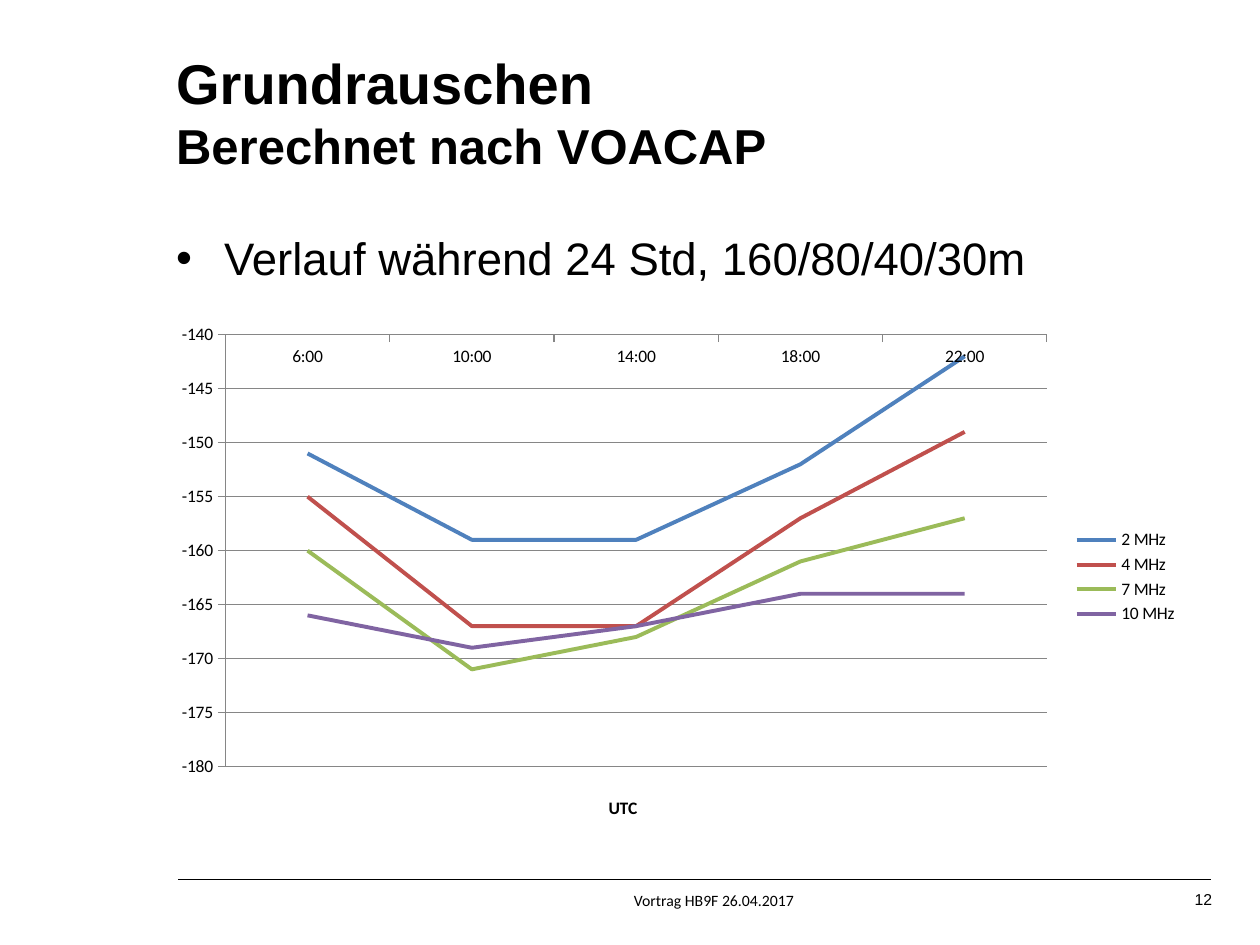
"""Build the slide on the noise floor over 24 hours."""
from lxml import etree
from pptx import Presentation
from pptx.chart.data import CategoryChartData as Data
from pptx.dml.color import RGBColor as RGB
from pptx.enum.chart import XL_CHART_TYPE as Kind, XL_LEGEND_POSITION as Side
from pptx.enum.chart import XL_TICK_MARK as Tick
from pptx.enum.shapes import MSO_CONNECTOR as Link
from pptx.enum.text import MSO_ANCHOR as Anchor, PP_ALIGN as Align
from pptx.oxml import parse_xml
from pptx.oxml.ns import nsdecls, qn
from pptx.util import Inches, Pt

HUES = {"ink": "000000", "grid": "868686", "2 MHz": "4F81BD",
        "4 MHz": "C0504D", "7 MHz": "9BBB59", "10 MHz": "8064A2"}
LEVELS = {"2 MHz": (-151, -159, -159, -152, -142),
          "4 MHz": (-155, -167, -167, -157, -149),
          "7 MHz": (-160, -171, -168, -161, -157),
          "10 MHz": (-166, -169, -167, -164, -164)}


def add_text(box, runs, name="Arial", bold=False, align=Align.LEFT,
             anchor=Anchor.TOP, wrap=True, inset=(0.1, 0.05)):
    frame = slide.shapes.add_textbox(*map(Inches, box)).text_frame
    side, edge = map(Inches, inset)
    look = {"word_wrap": wrap, "vertical_anchor": anchor,
            "margin_left": side, "margin_right": side,
            "margin_top": edge, "margin_bottom": edge}
    for key, value in look.items():
        setattr(frame, key, value)
    para = frame.paragraphs[0]
    para.alignment = align
    for place, (text, size) in enumerate(runs):
        if place:
            para.add_line_break()
        run = para.add_run()
        run.text = text
        for key, value in {"name": name, "size": Pt(size), "bold": bold}.items():
            setattr(run.font, key, value)
        run.font.color.rgb = RGB.from_string(HUES["ink"])
    return para


def set_place(node, **spots):
    old = node.find(qn("c:layout"))
    if old is not None:
        node.remove(old)
    marks = "".join(f'<c:{key} val="{value}"/>' for key, value in spots.items())
    layout = parse_xml(f'<c:layout {nsdecls("c")}><c:manualLayout>{marks}'
                       '</c:manualLayout></c:layout>')
    text = node.find(qn("c:tx"))
    if text is None:
        node.insert(0, layout)
    else:
        text.addnext(layout)


deck = Presentation()
deck.slide_width, deck.slide_height = Inches(10), Inches(7.5)
slide = deck.slides.add_slide(deck.slide_layouts[6])

add_text((9.37, 7.06, 0.25, 0.15), [("12", 9)], align=Align.RIGHT,
         wrap=False, inset=(0, 0))
rule = slide.shapes.add_connector(
    Link.STRAIGHT, *map(Inches, (9.61, 6.98, 1.41, 6.98)))
rule.line.color.rgb = RGB.from_string(HUES["ink"])
rule.line.width = Pt(0.75)
etree.SubElement(rule._element.spPr, qn("a:effectLst"))

add_text((1.3, 0.3, 8.2, 1.17),
         [("Grundrauschen", 32), ("Berechnet nach VOACAP", 28)],
         bold=True, anchor=Anchor.MIDDLE)
point = add_text((1.3, 1.78, 8.2, 0.6),
                 [("Verlauf während 24 Std, 160/80/40/30m", 26)])
props = point._p.get_or_add_pPr()
for key, value in {"marL": 0.38, "indent": -0.38}.items():
    props.set(key, str(Inches(value)))
etree.SubElement(props, qn("a:buFont")).set("typeface", "Arial")
etree.SubElement(props, qn("a:buChar")).set("char", "•")

data = Data()
data.categories = [f"{hour}:00" for hour in range(6, 23, 4)]
for name, values in LEVELS.items():
    data.add_series(name, values)
chart = slide.shapes.add_chart(
    Kind.LINE, *map(Inches, (1.3, 2.49, 8.15, 4.18)), data).chart
chart.has_title = False
for key, value in {"name": "Calibri", "size": Pt(10)}.items():
    setattr(chart.font, key, value)
chart.font.color.rgb = RGB.from_string(HUES["ink"])
chart.has_legend = True
for key, value in {"position": Side.RIGHT, "include_in_layout": False}.items():
    setattr(chart.legend, key, value)

times, scale = chart.category_axis, chart.value_axis
for key, value in {"minimum_scale": -180, "maximum_scale": -140,
                   "major_unit": 5, "has_major_gridlines": True}.items():
    setattr(scale, key, value)
for axis in (times, scale):
    axis.major_tick_mark, axis.minor_tick_mark = Tick.OUTSIDE, Tick.NONE
for part in (times, scale, scale.major_gridlines):
    part.format.line.color.rgb = RGB.from_string(HUES["grid"])
    part.format.line.width = Pt(0.75)

title = times.axis_title
title.text_frame.text = "UTC"
font = title.text_frame.paragraphs[0].runs[0].font
for key, value in {"name": "Calibri", "size": Pt(10), "bold": True}.items():
    setattr(font, key, value)
font.color.rgb = RGB.from_string(HUES["ink"])
set_place(title._element, xMode="edge", yMode="edge", x=0.43, y=0.91)
set_place(chart._chartSpace.chart.plotArea, layoutTarget="inner",
          xMode="edge", yMode="edge", x=0.06, y=0.04, w=0.8, h=0.82)

for series in chart.plots[0].series:
    series.smooth = False
    series.format.line.color.rgb = RGB.from_string(HUES[series.name])
    series.format.line.width = Pt(2.25)

add_text((3.39, 7.02, 4.55, 0.24), [("Vortrag HB9F 26.04.2017", 9)],
         name="Calibri", align=Align.CENTER, wrap=False)

deck.save("out.pptx")
